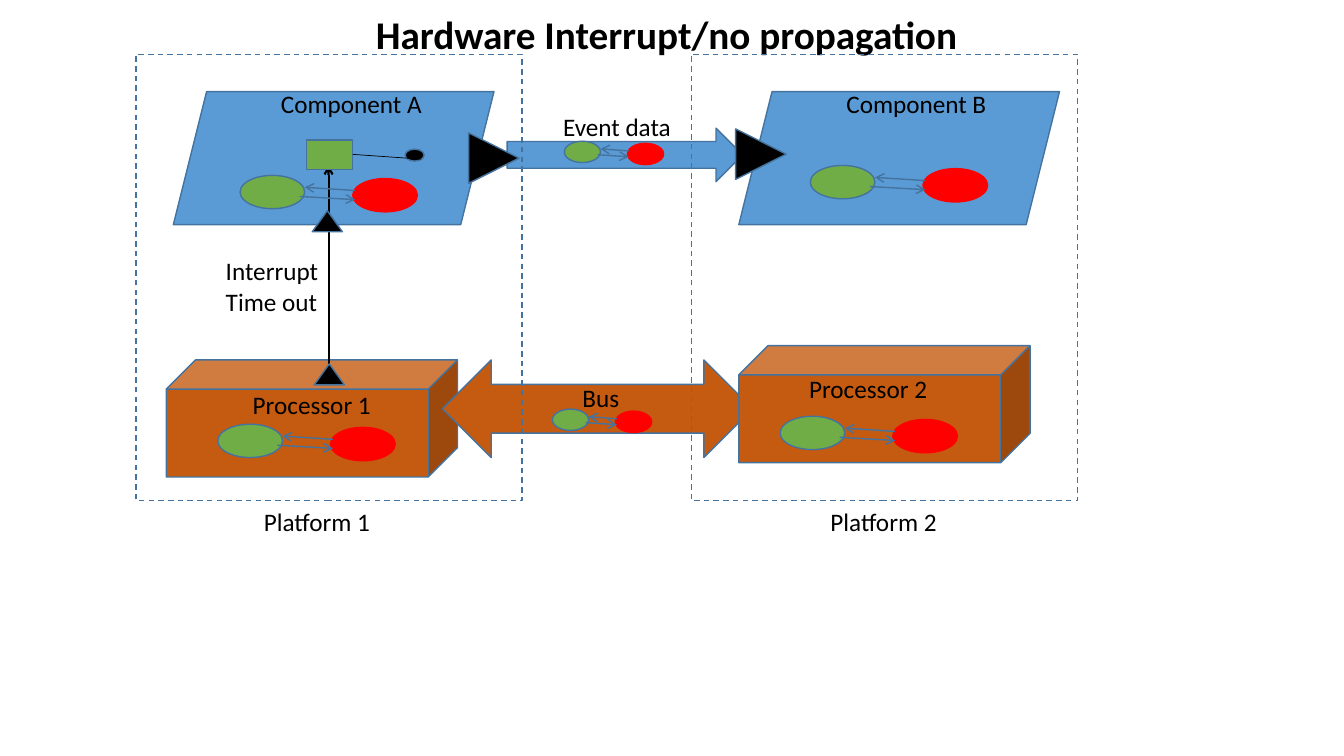
"""Build a slide on a hardware interrupt between two platforms."""
import dataclasses

import lxml.etree
import pptx
import pptx.dml.color
import pptx.enum.dml
import pptx.enum.shapes
import pptx.enum.text
import pptx.oxml.ns
import pptx.util

Cm = pptx.util.Cm
Form = pptx.enum.shapes.MSO_SHAPE


@dataclasses.dataclass(frozen=True)
class Theme:
    font: str = "Calibri"
    title: int = 28
    label: int = 18
    black: str = "000000"
    blue: str = "5B9BD5"
    edge: str = "43739E"
    rust: str = "C55A11"
    green: str = "70AD47"
    red: str = "FF0000"


class Sketch:
    def __init__(self, theme, slide):
        self.theme = theme
        self.slide = slide

    def color(self, value):
        return pptx.dml.color.RGBColor.from_string(value)

    def shape(self, form, left, top, width, height, fill=None, edge=None, turn=0, group=None):
        item = (group or self.slide).shapes.add_shape(
            form, Cm(left), Cm(top), Cm(width), Cm(height))
        item.shadow.inherit = False
        item.rotation = turn
        if fill:
            item.fill.solid()
            item.fill.fore_color.rgb = self.color(fill)
        else:
            item.fill.background()
        item.line.color.rgb = self.color(edge or self.theme.edge)
        item.line.width = pptx.util.Pt(1)
        return item

    def frame(self, *box):
        item = self.shape(Form.RECTANGLE, *box)
        item.line.dash_style = pptx.enum.dml.MSO_LINE.DASH

    def wire(self, start, stop, color, width, tip=None, group=None):
        item = (group or self.slide).shapes.add_connector(
            pptx.enum.shapes.MSO_CONNECTOR.STRAIGHT, *map(Cm, start + stop))
        item.line.color.rgb = self.color(color)
        item.line.width = pptx.util.Pt(width)
        qn = pptx.oxml.ns.qn
        props = item.element.spPr
        if tip:
            lxml.etree.SubElement(props.find(qn("a:ln")), qn(tip)).set("type", "arrow")
        lxml.etree.SubElement(props, qn("a:effectLst"))

    def text(self, frame, lines, size, bold=False):
        frame.vertical_anchor = pptx.enum.text.MSO_ANCHOR.TOP
        for place, line in enumerate(lines):
            para = frame.add_paragraph() if place else frame.paragraphs[0]
            para.alignment = pptx.enum.text.PP_ALIGN.LEFT
            run = para.add_run()
            run.text = line
            run.font.name = self.theme.font
            run.font.size = pptx.util.Pt(size)
            run.font.bold = bold
            run.font.color.rgb = self.color(self.theme.black)

    def label(self, left, top, width, *lines, height=1.02, wrap=True):
        box = self.slide.shapes.add_textbox(Cm(left), Cm(top), Cm(width), Cm(height))
        box.text_frame.word_wrap = wrap
        self.text(box.text_frame, lines, self.theme.label)

    def title(self, left, top, width, height, line):
        item = self.slide.shapes.title
        item.left, item.top, item.width, item.height = map(Cm, (left, top, width, height))
        item.text_frame.word_wrap = True
        self.text(item.text_frame, [line], self.theme.title, bold=True)

    def pair(self, left, top, wide=1, high=1):
        theme = self.theme
        group = self.slide.shapes.add_group_shape()

        def spot(across, down):
            return left + across * wide, top + down * high

        size = 1.63 * wide, 0.84 * high
        self.shape(Form.OVAL, *spot(2.84, 0.08), *size, theme.red, theme.red, group=group)
        self.shape(Form.OVAL, *spot(0, 0), *size, theme.green, group=group)
        for start, stop in (((2.9, 0.38), (1.63, 0.3)), ((1.5, 0.53), (2.9, 0.61))):
            self.wire(spot(*start), spot(*stop), theme.edge, 1, "a:tailEnd", group)


def main():
    deck = pptx.Presentation()
    deck.slide_width, deck.slide_height = Cm(33.87), Cm(19.05)
    theme = Theme()
    sketch = Sketch(theme, deck.slides.add_slide(deck.slide_layouts[5]))

    for left, name in ((4.37, "A"), (18.62, "B")):
        sketch.shape(Form.PARALLELOGRAM, left, 2.31, 8.08, 3.35, theme.blue)
        sketch.label(left + 2.46, 2.11, 4.1, f"Component {name}", wrap=False)
    sketch.shape(Form.RIGHT_ARROW, 12.78, 3.23, 5.94, 1.35, theme.blue)
    for left, top in ((11.81, 3.35), (18.54, 3.25)):
        sketch.shape(Form.ISOSCELES_TRIANGLE, left, top, 1.27, 1.27, theme.black, turn=90)

    sketch.shape(Form.CUBE, 4.19, 9.07, 7.34, 2.95, theme.rust)
    sketch.shape(Form.LEFT_RIGHT_ARROW, 11.15, 9.07, 7.82, 2.46, theme.rust)
    sketch.shape(Form.CUBE, 18.62, 8.71, 7.34, 2.95, theme.rust)
    sketch.label(13.94, 2.67, 3.5, "Event data")
    sketch.label(6.12, 9.68, 5.03, "Processor 1")
    sketch.label(20.14, 9.27, 5.03, "Processor 2")
    sketch.label(14.43, 9.5, 1.7, "Bus")

    for left, inner, name in ((3.43, 6.4, 1), (17.42, 20.68, 2)):
        sketch.frame(left, 1.37, 9.73, 11.25)
        sketch.label(inner, 12.63, 3.23, f"Platform {name}", wrap=False)

    sketch.wire((8.28, 4.17), (8.28, 9.5), theme.black, 1.5, "a:headEnd")
    sketch.shape(Form.RECTANGLE, 7.72, 3.53, 1.17, 0.74, theme.green)
    sketch.label(5.44, 6.32, 2.95, "Interrupt", "Time out", height=1.8)
    sketch.shape(Form.OVAL, 10.21, 3.76, 0.48, 0.3, theme.black)
    sketch.wire((10.62, 4.01), (8.89, 3.89), theme.black, 0.5)

    for spot in ((6.05, 4.42), (20.42, 4.17), (5.49, 10.69), (19.66, 10.49)):
        sketch.pair(*spot)
    for spot in ((14.22, 3.56), (13.92, 10.31)):
        sketch.pair(*spot, wide=0.56, high=0.64)
    for left, top in ((7.87, 5.31), (7.92, 9.17)):
        sketch.shape(Form.ISOSCELES_TRIANGLE, left, top, 0.76, 0.53, theme.black)

    sketch.title(9.22, 0.13, 15.47, 1.45, "Hardware Interrupt/no propagation")
    deck.save("out.pptx")


if __name__ == "__main__":
    main()
